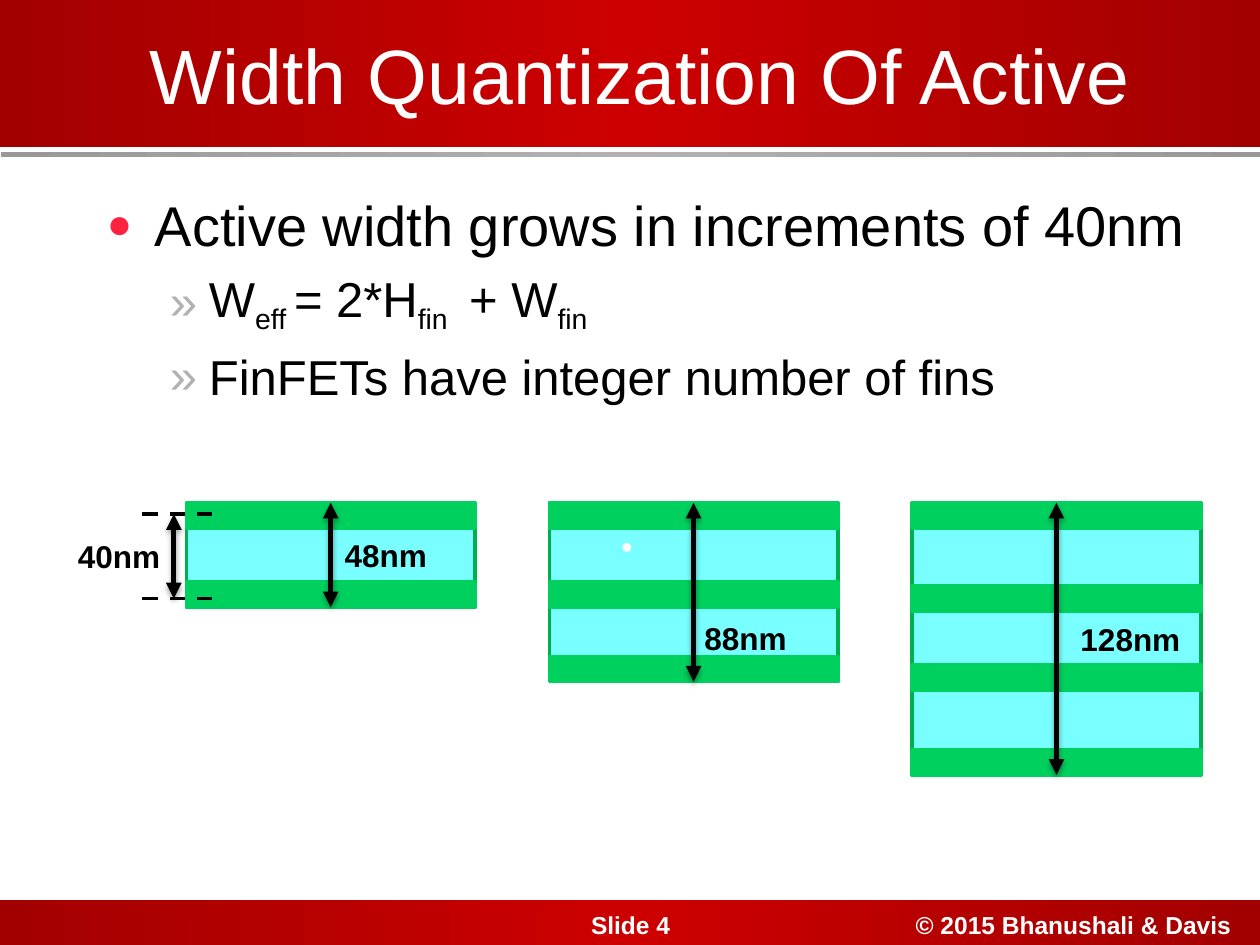
"""Build the slide on width quantization of FinFET active regions."""
from copy import deepcopy

from lxml import etree
from pptx import Presentation
from pptx.dml.color import RGBColor
from pptx.enum.dml import MSO_LINE
from pptx.enum.shapes import MSO_CONNECTOR, MSO_SHAPE
from pptx.enum.text import MSO_ANCHOR, PP_ALIGN
from pptx.oxml.ns import qn
from pptx.util import Inches, Pt

RECT, OVAL = MSO_SHAPE.RECTANGLE, MSO_SHAPE.OVAL
STRAIGHT = MSO_CONNECTOR.STRAIGHT
DASH = MSO_LINE.DASH
LEFT, CENTER = PP_ALIGN.LEFT, PP_ALIGN.CENTER
MIDDLE, BOTTOM = MSO_ANCHOR.MIDDLE, MSO_ANCHOR.BOTTOM
TOP_SIDE, BOTTOM_SIDE = 0, 2
BLACK, WHITE, RED, DARK_RED = "000000", "FFFFFF", "CC0000", "A20000"
GRAY, DARK_GRAY, BULLET_RED = "B2B2B2", "989898", "FB233D"
CYAN, GREEN, EDGE_GREEN = "79FFFF", "00D05E", "00B050"


def rgb(value):
    return RGBColor.from_string(value)


def sub(parent, tag, **attributes):
    return etree.SubElement(parent, qn(tag), attributes)


class SlideBuilder:
    """Hold the text style and the current slide, and draw each kind of element."""

    font_name = "Arial"

    def __init__(self, slide):
        self.slide = slide
        self.shapes = slide.shapes

    def style(self, font, size, color, bold=False):
        values = {"name": self.font_name, "size": Pt(size), "bold": bold}
        for name, value in values.items():
            setattr(font, name, value)
        font.color.rgb = rgb(color)

    def title(self, text, box):
        title = self.shapes.title
        title.element.getparent().append(title.element)
        for name, value in zip(("left", "top", "width", "height"), box):
            setattr(title, name, Inches(value))
        title.text_frame.vertical_anchor = BOTTOM
        title.text_frame.text = text
        heading = title.text_frame.paragraphs[0]
        heading.alignment = CENTER
        self.style(heading.font, 44, WHITE)

    def shape(self, kind, box, fill=None, edge=None):
        shape = self.shapes.add_shape(kind, *map(Inches, box))
        shape.shadow.inherit = False
        if fill:
            shape.fill.solid()
            shape.fill.fore_color.rgb = rgb(fill)
        if edge:
            shape.line.color.rgb = rgb(edge)
            shape.line.width = Pt(2)
        else:
            shape.line.fill.background()
        return shape

    def band(self, box, outer, middle):
        band = self.shape(RECT, box)
        band.fill.gradient()
        band.fill.gradient_angle = 0
        for stop, color, position in zip(band.fill.gradient_stops, (outer, middle), (0, 0.5)):
            stop.color.rgb = rgb(color)
            stop.position = position
        stops = band.element.spPr.find(".//" + qn("a:gsLst"))
        last = deepcopy(stops[0])
        last.set("pos", "100000")
        stops.append(last)

    def label(self, text, box, size, color, align=CENTER):
        frame = self.shapes.add_textbox(*map(Inches, box)).text_frame
        frame.word_wrap = True
        line = frame.paragraphs[0]
        line.text = text
        line.alignment = align
        self.style(line.font, size, color, True)

    def block(self, left, fin_tops, text, inset_left, inset_top):
        top, width, fin_height = fin_tops[0], 2.29, 0.2
        height = fin_tops[-1] + fin_height - top
        block = self.shape(RECT, (left, top, width, height), CYAN, EDGE_GREEN)
        frame = block.text_frame
        frame.margin_left, frame.margin_top = Inches(inset_left), Inches(inset_top)
        frame.vertical_anchor = MIDDLE
        caption = frame.paragraphs[0]
        caption.text = text
        caption.alignment = CENTER
        self.style(caption.font, 18, BLACK, True)
        for fin_top in fin_tops:
            self.shape(RECT, (left, fin_top, width, fin_height), GREEN, GREEN)
        return block

    def connector(self, ends, width):
        line = self.shapes.add_connector(STRAIGHT, *map(Inches, ends))
        line.line.color.rgb = rgb(BLACK)
        line.line.width = Pt(width)
        return line, sub(line.element.spPr, "a:effectLst")

    def arrow(self, ends=(0, 0, 0, 0), block=None):
        arrow, effects = self.connector(ends, 3)
        if block:
            arrow.begin_connect(block, TOP_SIDE)
            arrow.end_connect(block, BOTTOM_SIDE)
        outline = arrow.element.spPr.find(qn("a:ln"))
        for tip in ("a:headEnd", "a:tailEnd"):
            sub(outline, tip, type="triangle")
        shadow = sub(effects, "a:outerShdw", blurRad=str(Pt(3.1)), dist=str(Pt(1.8)),
                     dir="5400000", rotWithShape="0")
        sub(sub(shadow, "a:srgbClr", val=BLACK), "a:alpha", val="35000")

    def dash(self, ends):
        self.connector(ends, 2.25)[0].line.dash_style = DASH

    def bullets(self, box, items):
        frame = self.shapes.add_textbox(*map(Inches, box)).text_frame
        frame.word_wrap = True
        looks = ((32, 0.38, -0.38, "●", BULLET_RED, 75), (28, 0.81, -0.31, "»", GRAY, 100))
        for index, (level, runs) in enumerate(items):
            size, margin, indent, mark, color, percent = looks[level]
            item = frame.add_paragraph() if index else frame.paragraphs[0]
            item.level = level
            if index:
                item.space_before = Pt(6.5)
            properties = item._p.get_or_add_pPr()
            properties.set("marL", str(Inches(margin)))
            properties.set("indent", str(Inches(indent)))
            sub(sub(properties, "a:buClr"), "a:srgbClr", val=color)
            sub(properties, "a:buSzPct", val=str(percent * 1000))
            sub(properties, "a:buFont", typeface=self.font_name)
            sub(properties, "a:buChar", char=mark)
            for text, lowered in runs:
                run = item.add_run()
                run.text = text
                self.style(run.font, size, BLACK)
                if lowered:
                    run.font._element.set("baseline", "-25000")


def main():
    deck = Presentation()
    deck.slide_width, deck.slide_height = Inches(10), Inches(7.5)
    page = SlideBuilder(deck.slides.add_slide(deck.slide_layouts[5]))

    page.band((0, -0.06, 10.02, 1.23), DARK_RED, RED)
    page.band((-0.01, 7.14, 10.02, 0.38), DARK_RED, RED)
    page.band((0.01, 1.21, 9.99, 0.04), DARK_GRAY, GRAY)
    page.label("Slide 4", (4.53, 7.17, 0.95, 0.33), 14, WHITE)
    page.label("© 2015 Bhanushali & Davis", (7.01, 7.17, 3.02, 0.33), 14, WHITE)
    page.title("Width Quantization Of Active", (0.83, 0.08, 8.5, 0.92))

    page.bullets((0.75, 1.46, 8.92, 2.2), (
        (0, [("Active width grows in increments of 40nm", False)]),
        (1, [("W", False), ("eff ", True), ("= 2*H", False), ("fin ", True),
             (" + W", False), ("fin", True)]),
        (1, [("FinFETs have integer number of fins", False)]),
    ))

    active_regions = (
        (1.48, (3.99, 4.62), "48nm", 0.97, 0.05),
        (4.36, (3.99, 4.62, 5.21), "88nm", 0.92, 0.77),
        (7.24, (3.99, 4.65, 5.28, 5.95), "128nm", 1.27, 0.05),
    )
    for region in active_regions:
        page.arrow(block=page.block(*region))
    page.shape(OVAL, (4.94, 4.31, 0.07, 0.07), WHITE)

    pitch_top, pitch_bottom = 4.08, 4.75
    page.arrow((1.38, pitch_top, 1.38, pitch_bottom))
    for level in (pitch_top, pitch_bottom):
        page.dash((1.13, level, 1.68, level))
    page.label("40nm", (0.52, 4.21, 0.9, 0.4), 18, BLACK, LEFT)

    deck.save("out.pptx")


if __name__ == "__main__":
    main()
